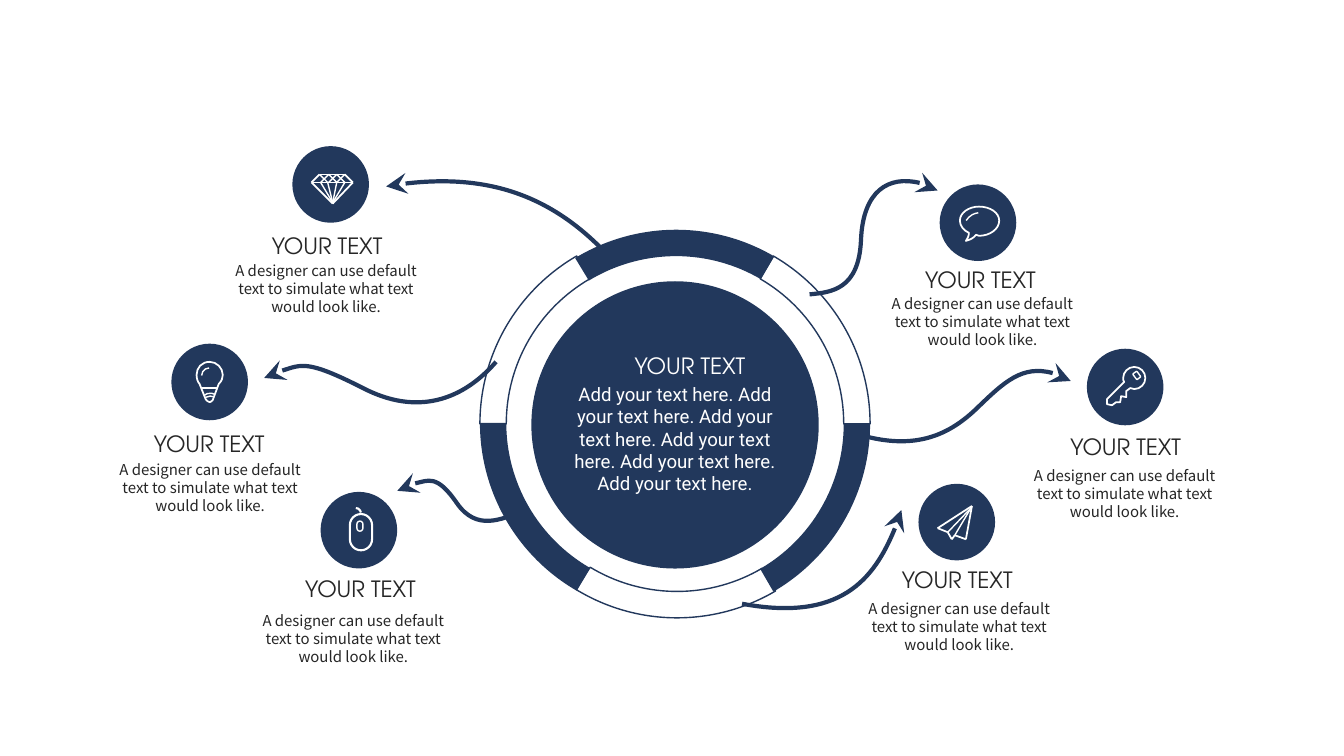
from dataclasses import dataclass
from typing import Any

import pptx
import pptx.dml.color
import pptx.enum.shapes
import pptx.enum.text
import pptx.oxml
import pptx.oxml.ns
import pptx.util

Inches = pptx.util.Inches
Pt = pptx.util.Pt
RGBColor = pptx.dml.color.RGBColor
Preset = pptx.enum.shapes.MSO_SHAPE
Align = pptx.enum.text.PP_ALIGN

NAVY = RGBColor(0x22, 0x38, 0x5C)
WHITE = RGBColor(0xFF, 0xFF, 0xFF)
INK = RGBColor(0x26, 0x26, 0x26)

TITLE_FONT = "TeX Gyre Adventor"
BODY_FONT = "Noto Sans CJK SC"
CENTER_FONT = "Roboto"
TITLE = "YOUR TEXT"
BODY = "A designer can use default text to simulate what text would look like."
CENTER_BODY = " ".join(["Add your text here."] * 6)
TITLE_SIZE = (1.47, 0.37)
BODY_SIZE = (2.23, 0.64)
BADGE = 0.76
RING = 3.85

Point = tuple[float, float]
# A path step is a point for a straight line, or six numbers for a cubic curve
Steps = list[tuple[float, ...]]


@dataclass
class Form:
    kind: Any
    box: tuple[float, float, float, float]
    adjustments: tuple[float, ...] = ()
    rotation: float = 0
    flip: str = ""
    fill: RGBColor | None = None
    line: RGBColor | None = WHITE
    weight: float = 1


@dataclass
class Outline:
    steps: Steps
    closed: bool = True
    line: RGBColor = WHITE
    weight: float = 1.25
    arrow: bool = False


@dataclass
class Stroke:
    points: list[Point]
    weight: float = 1


@dataclass
class Topic:
    badge: Point
    title: Point
    body: Point
    arrow: Steps
    icon: list[Form | Outline | Stroke]


def style(shape: Any, fill: RGBColor | None, line: RGBColor | None, weight: float) -> None:
    shape.shadow.inherit = False
    if fill is None:
        shape.fill.background()
    else:
        shape.fill.solid()
        shape.fill.fore_color.rgb = fill
    if line is None:
        shape.line.fill.background()
    else:
        shape.line.color.rgb = line
        shape.line.width = Pt(weight)


def draw_form(shapes: Any, form: Form) -> None:
    shape = shapes.add_shape(form.kind, *map(Inches, form.box))
    for index, value in enumerate(form.adjustments):
        shape.adjustments[index] = value
    shape.rotation = form.rotation
    for axis in form.flip:
        shape._element.spPr.find(pptx.oxml.ns.qn("a:xfrm")).set("flip" + axis, "1")
    style(shape, form.fill, form.line, form.weight)


def sample(steps: Steps) -> list[Point]:
    """Points along the path, which give its bounds."""
    points = [steps[0]]
    for step in steps[1:]:
        if len(step) == 2:
            points.append(step)
            continue
        corners = [points[-1], step[:2], step[2:4], step[4:]]
        for part in range(1, 21):
            t = part / 20
            weights = ((1 - t) ** 3, 3 * t * (1 - t) ** 2, 3 * t * t * (1 - t), t ** 3)
            points.append(tuple(sum(w * c[axis] for w, c in zip(weights, corners)) for axis in (0, 1)))
    return points


def draw_outline(shapes: Any, outline: Outline) -> None:
    points = [(Inches(x), Inches(y)) for x, y in sample(outline.steps)]
    builder = shapes.build_freeform(*points[0])
    builder.add_line_segments(points[1:], close=outline.closed)
    shape = builder.convert_to_shape()
    # Swap the sampled segments for true curves
    left, top = min(x for x, _ in points), min(y for _, y in points)
    path = shape._element.find(".//" + pptx.oxml.ns.qn("a:path"))
    for child in list(path):
        path.remove(child)
    for index, step in enumerate(outline.steps):
        tag = "moveTo" if index == 0 else "lnTo" if len(step) == 2 else "cubicBezTo"
        command = pptx.oxml.ns.qn("a:" + tag)
        element = path.makeelement(command, {})
        path.append(element)
        for x, y in zip(step[::2], step[1::2]):
            place = {"x": str(Inches(x) - left), "y": str(Inches(y) - top)}
            element.append(element.makeelement(pptx.oxml.ns.qn("a:pt"), place))
    if outline.closed:
        path.append(path.makeelement(pptx.oxml.ns.qn("a:close"), {}))
    style(shape, None, outline.line, outline.weight)
    if outline.arrow:
        line = shape.line._get_or_add_ln()
        head = {"type": "stealth", "w": "lg", "len": "lg"}
        line.append(line.makeelement(pptx.oxml.ns.qn("a:tailEnd"), head))


def draw_stroke(shapes: Any, stroke: Stroke) -> None:
    for start, end in zip(stroke.points, stroke.points[1:]):
        connector = shapes.add_connector(pptx.enum.shapes.MSO_CONNECTOR.STRAIGHT, *map(Inches, start + end))
        connector.line.color.rgb = WHITE
        connector.line.width = Pt(stroke.weight)
        properties = connector._element.spPr
        properties.append(properties.makeelement(pptx.oxml.ns.qn("a:effectLst"), {}))


def add_text(shapes: Any, text: str, place: Point, extent: Point, *, font: str, size: float,
             color: RGBColor = INK, align: Any = Align.CENTER, wrap: bool = True,
             spacing: float | None = None) -> None:
    frame = shapes.add_textbox(*map(Inches, place + extent)).text_frame
    frame.word_wrap = wrap
    frame.auto_size = pptx.enum.text.MSO_AUTO_SIZE.SHAPE_TO_FIT_TEXT
    paragraph = frame.paragraphs[0]
    paragraph.alignment = align
    if spacing:
        paragraph.line_spacing = Pt(spacing)
    run = paragraph.add_run()
    run.text = text
    run.font.name, run.font.size, run.font.color.rgb = font, Pt(size), color


DRAW = {Form: draw_form, Outline: draw_outline, Stroke: draw_stroke}

# Ring segments: left, top, sweep end, rotation, flip, filled
SEGMENTS = [(4.76, 2.28, 143.93, 0, "", False), (4.78, 2.28, 143.93, 60.5, "", True),
            (4.78, 2.28, 143.93, 0, "H", False), (4.76, 2.27, 143.93, 0, "V", True),
            (4.79, 2.28, 143.93, 299.4, "V", False), (4.78, 2.28, 143.93, 0, "HV", True)]

DIAMOND = [Stroke([(3.3, 2.02), (3.09, 1.81), (3.17, 1.73), (3.42, 1.73), (3.5, 1.81), (3.3, 2.02)], 1.25),
           Stroke([(3.1, 1.81), (3.5, 1.81)]),
           *[Stroke([(3.3, 2.01), (x, 1.81)]) for x in (3.18, 3.25, 3.34, 3.42)],
           *[Stroke([(x, 1.73), (x + shift, 1.81)]) for x in (3.17, 3.26, 3.34) for shift in (0.08,)],
           *[Stroke([(x, 1.73), (x - 0.08, 1.81)]) for x in (3.26, 3.34, 3.42)]]
BULB = [Outline([(2.08, 3.59), (2.15, 3.59, 2.21, 3.65, 2.21, 3.72), (2.21, 3.75, 2.2, 3.78, 2.17, 3.81),
                 (2.11, 3.97), (2.1, 3.98, 2.09, 3.99, 2.08, 3.99), (2.06, 3.99, 2.05, 3.97, 2.04, 3.96),
                 (1.98, 3.81), (1.96, 3.79, 1.95, 3.75, 1.95, 3.72), (1.95, 3.65, 2, 3.59, 2.08, 3.59)]),
        Form(Preset.ARC, (2, 3.65, 0.15, 0.15), (162, 215.5), 270), Stroke([(2, 3.85), (2.15, 3.85)], 1.25),
        Form(Preset.ARC, (2, 3.9, 0.17, 0.17), (168.25, 210.6), 309),
        Form(Preset.ARC, (2.01, 3.93, 0.15, 0.15), (175.25, 210.13), 300)]
MOUSE = [Form(Preset.ROUNDED_RECTANGLE, (3.47, 5.1, 0.22, 0.36), (0.5,), weight=1.5),
         Form(Preset.ROUNDED_RECTANGLE, (3.54, 5.17, 0.06, 0.1), (0.5,)),
         Form(Preset.ARC, (3.48, 5.04, 0.1, 0.1), (162, 212.1), weight=1.5)]
BUBBLE = [Outline([(9.71, 2.05), (9.82, 2.05, 9.91, 2.11, 9.91, 2.19), (9.91, 2.27, 9.82, 2.34, 9.71, 2.34),
                   (9.68, 2.33), (9.66, 2.36, 9.62, 2.38, 9.58, 2.39), (9.59, 2.37, 9.61, 2.35, 9.61, 2.31),
                   (9.56, 2.29, 9.52, 2.24, 9.52, 2.19), (9.52, 2.11, 9.61, 2.05, 9.71, 2.05)]),
          Form(Preset.ARC, (9.56, 2.11, 0.32, 0.32), (162, 193.58), 301.2)]
KEY = [Outline([(11.25, 3.64), (11.31, 3.64, 11.36, 3.69, 11.36, 3.75), (11.36, 3.81, 11.31, 3.86, 11.25, 3.86),
                (11.21, 3.85), (11.17, 3.88), (11.17, 3.94), (11.12, 3.93), (11.11, 3.99), (11.07, 3.99),
                (11.03, 4.02), (10.98, 4.01), (10.98, 3.96), (11.15, 3.79),
                (11.14, 3.78, 11.14, 3.76, 11.14, 3.75), (11.14, 3.69, 11.19, 3.64, 11.25, 3.64)]),
       Form(Preset.ROUNDED_RECTANGLE, (11.24, 3.7, 0.07, 0.05), rotation=53.8)]
PLANE = [Stroke([(9.64, 5.02), (9.3, 5.24), (9.4, 5.28), (9.44, 5.35), (9.47, 5.31), (9.58, 5.35), (9.64, 5.02)], 1.25),
         Stroke([(9.4, 5.28), (9.63, 5.04), (9.47, 5.31)])]

TOPICS = [
    Topic((2.9, 1.45), (2.51, 2.25), (2.12, 2.54), [(5.96, 2.46), (5.43, 1.93, 4.72, 1.69, 3.83, 1.85)], DIAMOND),
    Topic((1.7, 3.41), (1.34, 4.22), (0.97, 4.52),
          [(4.92, 3.59), (4.59, 3.97, 4.14, 4.13, 3.6, 3.85), (3.05, 3.57, 2.91, 3.62, 2.62, 3.75)], BULB),
    Topic((3.18, 4.88), (2.84, 5.66), (2.39, 6.02),
          [(5.15, 5.09), (4.98, 5.14, 4.73, 5.28, 4.53, 4.99), (4.33, 4.7, 4.08, 4.78, 3.94, 4.87)], MOUSE),
    Topic((9.32, 1.83), (8.99, 2.59), (8.63, 2.87),
          [(8.03, 2.92), (8.25, 2.9, 8.52, 2.87, 8.54, 2.38), (8.56, 1.89, 8.92, 1.66, 9.3, 1.89)], BUBBLE),
    Topic((10.78, 3.46), (10.43, 4.25), (10.04, 4.58),
          [(8.55, 4.32), (9.09, 4.47, 9.42, 4.31, 9.69, 4.05), (9.96, 3.79, 10.22, 3.54, 10.62, 3.78)], KEY),
    Topic((9.11, 4.8), (8.76, 5.57), (8.4, 5.9), [(7.36, 5.99), (8.33, 6.17, 8.76, 5.66, 8.94, 5.06)], PLANE)]


def main() -> None:
    presentation = pptx.Presentation()
    presentation.slide_width, presentation.slide_height = Inches(13.33), Inches(7.5)
    shapes = presentation.slides.add_slide(presentation.slide_layouts[6]).shapes

    # Ring and central disc
    for left, top, end, rotation, flip, filled in SEGMENTS:
        fill, line = (NAVY, None) if filled else (None, NAVY)
        start = 106.9 if rotation else 108
        draw_form(shapes, Form(Preset.BLOCK_ARC, (left, top, RING, RING), (start, end, 0.068), rotation, flip, fill, line))
    draw_form(shapes, Form(Preset.OVAL, (5.27, 2.79, 2.85, 2.85), fill=NAVY, line=None))
    add_text(shapes, TITLE, (6.02, 3.44), TITLE_SIZE, font=TITLE_FONT, size=16, color=WHITE, align=Align.RIGHT, wrap=False)
    add_text(shapes, CENTER_BODY, (5.59, 3.75), (2.21, 1.22), font=CENTER_FONT, size=13.3, color=WHITE)

    # Topics around the ring
    for topic in TOPICS:
        draw_outline(shapes, Outline(topic.arrow, closed=False, line=NAVY, weight=3, arrow=True))
        group = shapes.add_group_shape().shapes
        draw_form(group, Form(Preset.OVAL, topic.badge + (BADGE, BADGE), fill=NAVY, line=None))
        for part in topic.icon:
            DRAW[type(part)](group, part)
        add_text(shapes, TITLE, topic.title, TITLE_SIZE, font=TITLE_FONT, size=16, wrap=False)
        add_text(shapes, BODY, topic.body, BODY_SIZE, font=BODY_FONT, size=10.7, spacing=12.9)

    presentation.save("out.pptx")


if __name__ == "__main__":
    main()
